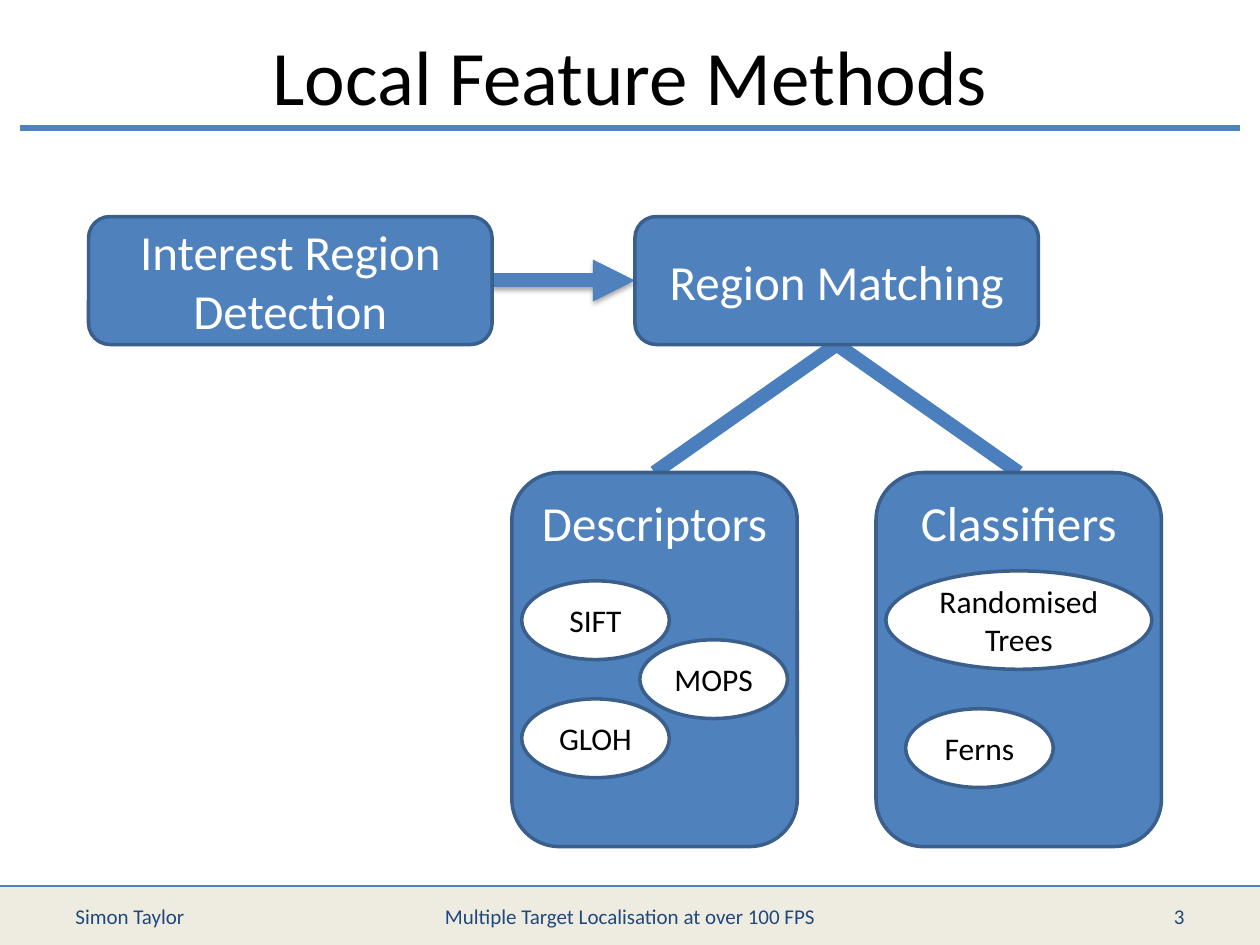
from dataclasses import dataclass

from lxml.etree import SubElement
from pptx import Presentation
from pptx.dml.color import RGBColor
from pptx.enum.shapes import MSO_CONNECTOR, MSO_SHAPE
from pptx.enum.text import MSO_ANCHOR, PP_ALIGN
from pptx.oxml.ns import qn
from pptx.util import Pt

BLUE = RGBColor(0x4F, 0x81, 0xBD)
BRANCH_BLUE = RGBColor(0x4B, 0x7E, 0xBC)
OUTLINE = RGBColor(0x3A, 0x5F, 0x8C)
FOOTER_TEXT = RGBColor(0x1F, 0x49, 0x7D)
FOOTER_FILL = RGBColor(0xEE, 0xEC, 0xE1)
WHITE = RGBColor(0xFF, 0xFF, 0xFF)
BLACK = RGBColor(0x00, 0x00, 0x00)

PAGE_WIDTH, PAGE_HEIGHT = 720, 540
FOOTER_TOP = 506.25


@dataclass(frozen=True)
class Node:
    text: str
    left: float
    top: float
    width: float
    height: float

    @property
    def center(self) -> float:
        return self.left + self.width / 2

    @property
    def right(self) -> float:
        return self.left + self.width

    @property
    def middle(self) -> float:
        return self.top + self.height / 2

    @property
    def bottom(self) -> float:
        return self.top + self.height


@dataclass(frozen=True)
class NodeStyle:
    shape: MSO_SHAPE
    fill: RGBColor
    color: RGBColor
    size: float
    anchor: MSO_ANCHOR


STAGE_STYLE = NodeStyle(MSO_SHAPE.ROUNDED_RECTANGLE, BLUE, WHITE, 28, MSO_ANCHOR.MIDDLE)
FAMILY_STYLE = NodeStyle(MSO_SHAPE.ROUNDED_RECTANGLE, BLUE, WHITE, 28, MSO_ANCHOR.TOP)
METHOD_STYLE = NodeStyle(MSO_SHAPE.OVAL, WHITE, BLACK, 18, MSO_ANCHOR.MIDDLE)

DETECTION = Node("Interest Region Detection", 50.6, 123.75, 230.6, 73.1)
MATCHING = Node("Region Matching", 362.8, 123.75, 230.6, 73.1)
FAMILIES = [
    Node("Descriptors", 292.5, 270, 163.1, 213.75),
    Node("Classifiers", 500.6, 270, 163.1, 213.75),
]
METHODS = [
    Node("SIFT", 298.1, 331.9, 84.4, 45),
    Node("MOPS", 365.6, 365.6, 84.4, 45),
    Node("GLOH", 298.1, 399.4, 84.4, 45),
    Node("Randomised Trees", 506.25, 326.25, 151.9, 56.25),
    Node("Ferns", 517.5, 405, 84.4, 45),
]
FOOTERS = [
    (Node("Simon Taylor", 36, 508.9, 168, 28.75), PP_ALIGN.LEFT),
    (Node("Multiple Target Localisation at over 100 FPS", 246, 508.9, 228, 28.75), PP_ALIGN.CENTER),
    (Node("3", 516, 508.9, 168, 28.75), PP_ALIGN.RIGHT),
]


def place(node: Node) -> tuple:
    return Pt(node.left), Pt(node.top), Pt(node.width), Pt(node.height)


def write(box, text: str, size: float, color: RGBColor, align=PP_ALIGN.CENTER, anchor=MSO_ANCHOR.MIDDLE) -> None:
    frame = box.text_frame
    frame.word_wrap = True
    frame.vertical_anchor = anchor
    para = frame.paragraphs[0]
    para.alignment = align
    span = para.add_run()
    span.text = text
    span.font.name = "Calibri"
    span.font.size = Pt(size)
    span.font.color.rgb = color


def draw_node(page, node: Node, style: NodeStyle) -> None:
    box = page.shapes.add_shape(style.shape, *place(node))
    box.shadow.inherit = False
    box.fill.solid()
    box.fill.fore_color.rgb = style.fill
    box.line.color.rgb = OUTLINE
    box.line.width = Pt(2)
    write(box, node.text, style.size, style.color, anchor=style.anchor)


def draw_line(page, start: tuple, end: tuple, color: RGBColor, width: float, kind=MSO_CONNECTOR.STRAIGHT):
    line = page.shapes.add_connector(kind, *map(Pt, start), *map(Pt, end))
    line.line.color.rgb = color
    line.line.width = Pt(width)
    effects = SubElement(line._element.spPr, qn("a:effectLst"))
    return line, effects


def draw_arrow(page, start: tuple, end: tuple) -> None:
    line, effects = draw_line(page, start, end, BLUE, 8, MSO_CONNECTOR.ELBOW)
    SubElement(line.line._get_or_add_ln(), qn("a:tailEnd"), type="triangle")
    shadow = SubElement(effects, qn("a:outerShdw"), blurRad=str(Pt(3.1)), dist=str(Pt(1.8)), dir="5400000", rotWithShape="0")
    tint = SubElement(shadow, qn("a:srgbClr"), val=str(BLACK))
    SubElement(tint, qn("a:alpha"), val="35000")


def draw_footer(page) -> None:
    band = page.shapes.add_shape(
        MSO_SHAPE.RECTANGLE, 0, Pt(FOOTER_TOP), Pt(PAGE_WIDTH), Pt(PAGE_HEIGHT - FOOTER_TOP)
    )
    band.shadow.inherit = False
    band.fill.solid()
    band.fill.fore_color.rgb = FOOTER_FILL
    band.line.fill.background()
    draw_line(page, (0, FOOTER_TOP), (PAGE_WIDTH, FOOTER_TOP), BLUE, 1)
    for node, align in FOOTERS:
        write(page.shapes.add_textbox(*place(node)), node.text, 12, FOOTER_TEXT, align)


def main() -> None:
    deck = Presentation()
    deck.slide_width, deck.slide_height = Pt(PAGE_WIDTH), Pt(PAGE_HEIGHT)
    page = deck.slides.add_slide(deck.slide_layouts[5])

    heading = Node("Local Feature Methods", 36, 11.25, 648, 62.5)
    title = page.shapes.title
    title.left, title.top, title.width, title.height = place(heading)
    write(title, heading.text, 44, BLACK)
    draw_line(page, (11.25, 73.1), (PAGE_WIDTH - 11.25, 73.1), BLUE, 3)
    draw_footer(page)

    draw_arrow(page, (DETECTION.right, DETECTION.middle), (MATCHING.left, MATCHING.middle))
    for family in FAMILIES:
        draw_line(page, (MATCHING.center, MATCHING.bottom), (family.center, family.top), BRANCH_BLUE, 8)
    for nodes, style in (
        ([DETECTION, MATCHING], STAGE_STYLE),
        (FAMILIES, FAMILY_STYLE),
        (METHODS, METHOD_STYLE),
    ):
        for node in nodes:
            draw_node(page, node, style)

    deck.save("out.pptx")


if __name__ == "__main__":
    main()
